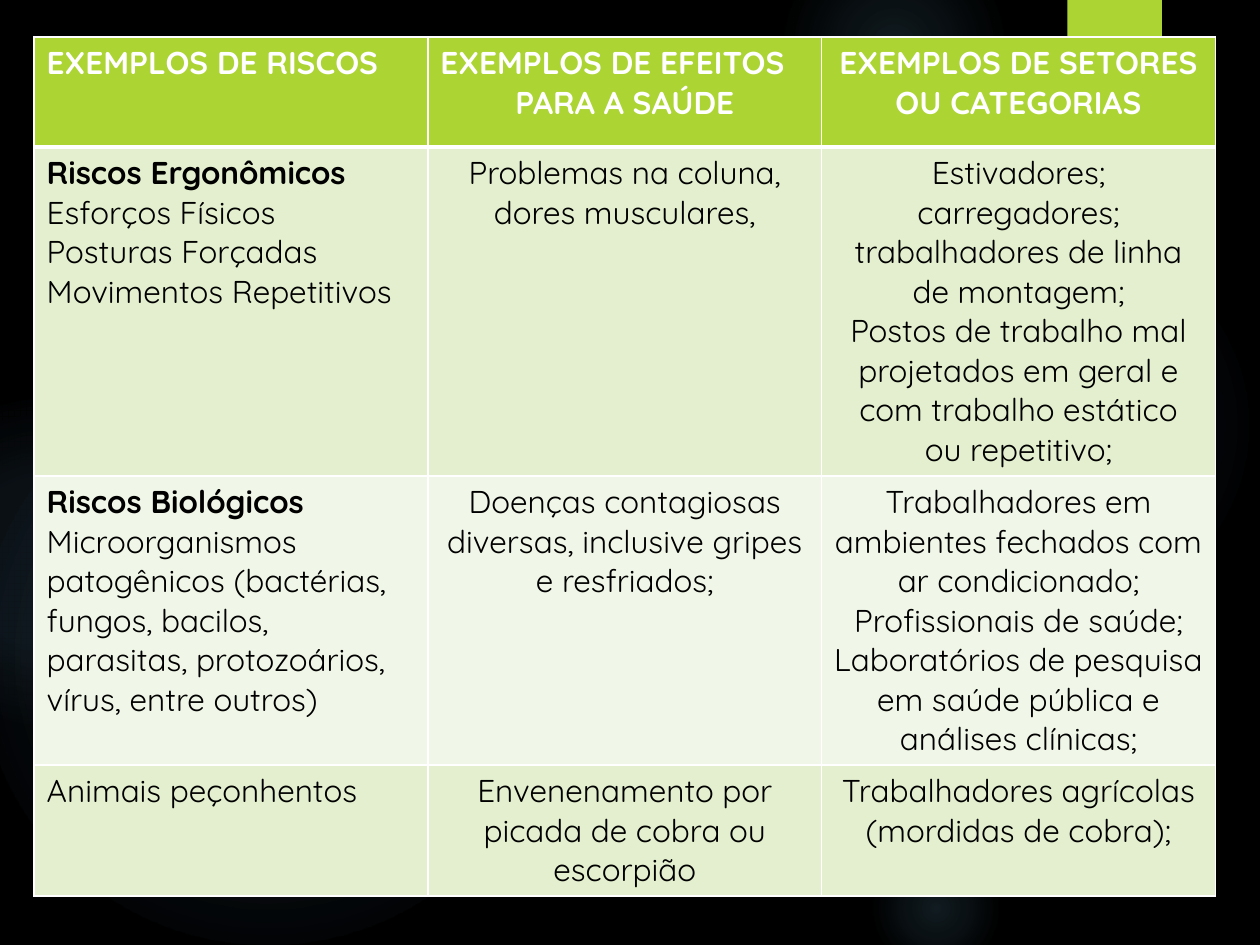
import pptx
import pptx.util
import pptx.dml.color
import pptx.enum.shapes
import pptx.enum.text
import pptx.oxml
import pptx.oxml.ns
from dataclasses import dataclass
from lxml import etree

Pt = pptx.util.Pt
RGB = pptx.dml.color.RGBColor.from_string
Shape = pptx.enum.shapes.MSO_SHAPE
Align = pptx.enum.text.PP_ALIGN


@dataclass(frozen=True)
class Theme:
    back: str = "000000"
    glow: str = "7AC4F0"
    green: str = "ACD433"
    bands: tuple = ("E3EFCE", "F1F7E8")
    light: str = "FFFFFF"
    dark: str = "000000"
    font: str = "Quicksand"
    size: int = 18
    thin: int = 1
    thick: int = 3


THEME = Theme()

# left, top, diameter, then (position, opacity) stops in percent
GLOWS = [
    (496, 132, 222, ((0, 7), (36, 6), (69, 0))),
    (448, -36, 126, ((0, 14), (36, 7), (73, 0))),
    (496, 480, 78, ((0, 14), (36, 7), (66, 0))),
    (-12, 210, 330, ((0, 11), (36, 10), (75, 0))),
    (-66, 228, 186, ((0, 8), (36, 8), (72, 0))),
]

# One list of paragraphs per cell
ROWS = [
    [["EXEMPLOS DE RISCOS"],
     ["EXEMPLOS DE EFEITOS", "PARA A SAÚDE"],
     ["EXEMPLOS DE SETORES", "OU CATEGORIAS"]],
    [["Riscos Ergonômicos", "Esforços Físicos", "Posturas Forçadas",
      "Movimentos Repetitivos"],
     ["Problemas na coluna, dores musculares,"],
     ["Estivadores; carregadores; trabalhadores de linha de montagem;",
      "Postos de trabalho mal projetados em geral e com trabalho estático",
      "ou repetitivo;"]],
    [["Riscos Biológicos", "Microorganismos patogênicos (bactérias,",
      "fungos, bacilos, parasitas, protozoários, vírus, entre outros)"],
     ["Doenças contagiosas diversas, inclusive gripes e resfriados;"],
     ["Trabalhadores em ambientes fechados com ar condicionado;",
      "Profissionais de saúde; Laboratórios de pesquisa em saúde pública "
      "e análises clínicas;"]],
    [["Animais peçonhentos"],
     ["Envenenamento por picada de cobra ou escorpião"],
     ["Trabalhadores agrícolas (mordidas de cobra);"]],
]
HEIGHTS = (63, 188, 165, 75)
LEFT = {"EXEMPLOS DE EFEITOS"}  # left-set line outside the first column


def add_form(slide, kind, box):
    form = slide.shapes.add_shape(kind, *map(Pt, box))
    form.shadow.inherit = False
    form.line.fill.background()
    return form


def add_glow(slide, box, stops):
    form = add_form(slide, Shape.OVAL, box)
    marks = "".join(
        f'<a:gs pos="{pos * 1000}"><a:srgbClr val="{THEME.glow}">'
        f'<a:alpha val="{alpha * 1000}"/></a:srgbClr></a:gs>'
        for pos, alpha in stops)
    grad = pptx.oxml.parse_xml(
        f'<a:gradFill {pptx.oxml.ns.nsdecls("a")}><a:gsLst>{marks}</a:gsLst>'
        '<a:path path="circle"><a:fillToRect l="50000" t="50000" r="50000" '
        'b="50000"/></a:path></a:gradFill>')
    form.element.spPr.find(pptx.oxml.ns.qn("a:prstGeom")).addnext(grad)


def add_back(slide, box):
    left, top = box[:2]
    fill = slide.background.fill
    fill.solid()
    fill.fore_color.rgb = RGB(THEME.back)
    for x, y, size, stops in GLOWS:
        add_glow(slide, (left + x, top + y, size, size), stops)
    # Green tab at the top edge
    tab = add_form(slide, Shape.RECTANGLE, (left + 610, top, 54, 86))
    tab.fill.solid()
    tab.fill.fore_color.rgb = RGB(THEME.green)


def set_edges(cell, row):
    qn = pptx.oxml.ns.qn
    props = cell._tc.get_or_add_tcPr()
    heavy = {0: "lnB", 1: "lnT"}.get(row)
    for spot, side in enumerate(("lnL", "lnR", "lnT", "lnB")):
        width = THEME.thick if side == heavy else THEME.thin
        edge = etree.Element(qn(f"a:{side}"), w=str(Pt(width)))
        fill = etree.SubElement(edge, qn("a:solidFill"))
        etree.SubElement(fill, qn("a:srgbClr"), val=THEME.light)
        props.insert(spot, edge)


def fill_cell(cell, lines, row, col):
    head = row == 0
    cell.fill.solid()
    cell.fill.fore_color.rgb = RGB(
        THEME.green if head else THEME.bands[(row - 1) % 2])
    set_edges(cell, row)
    frame = cell.text_frame
    for spot, text in enumerate(lines):
        para = frame.add_paragraph() if spot else frame.paragraphs[0]
        flush = col == 0 or text in LEFT
        para.alignment = Align.LEFT if flush else Align.CENTER
        run = para.add_run()
        run.text = text
        style = {"name": THEME.font, "size": Pt(THEME.size),
                 "bold": head or text.startswith("Riscos")}
        for key, value in style.items():
            setattr(run.font, key, value)
        run.font.color.rgb = RGB(THEME.light if head else THEME.dark)


def add_risks(slide, box):
    count = len(ROWS[0])
    grid = slide.shapes.add_table(len(ROWS), count, *map(Pt, box)).table
    for col in grid.columns:
        col.width = Pt(box[2] / count)
    for row, (high, cells) in enumerate(zip(HEIGHTS, ROWS)):
        grid.rows[row].height = Pt(high)
        for col, lines in enumerate(cells):
            fill_cell(grid.cell(row, col), lines, row, col)


def main():
    deck = pptx.Presentation()
    deck.slide_width, deck.slide_height = Pt(720), Pt(540)
    slide = deck.slides.add_slide(deck.slide_layouts[6])
    add_back(slide, (0, 0, 720, 540))
    add_risks(slide, (19.5, 21, 675, sum(HEIGHTS)))
    deck.save("out.pptx")


if __name__ == "__main__":
    main()
